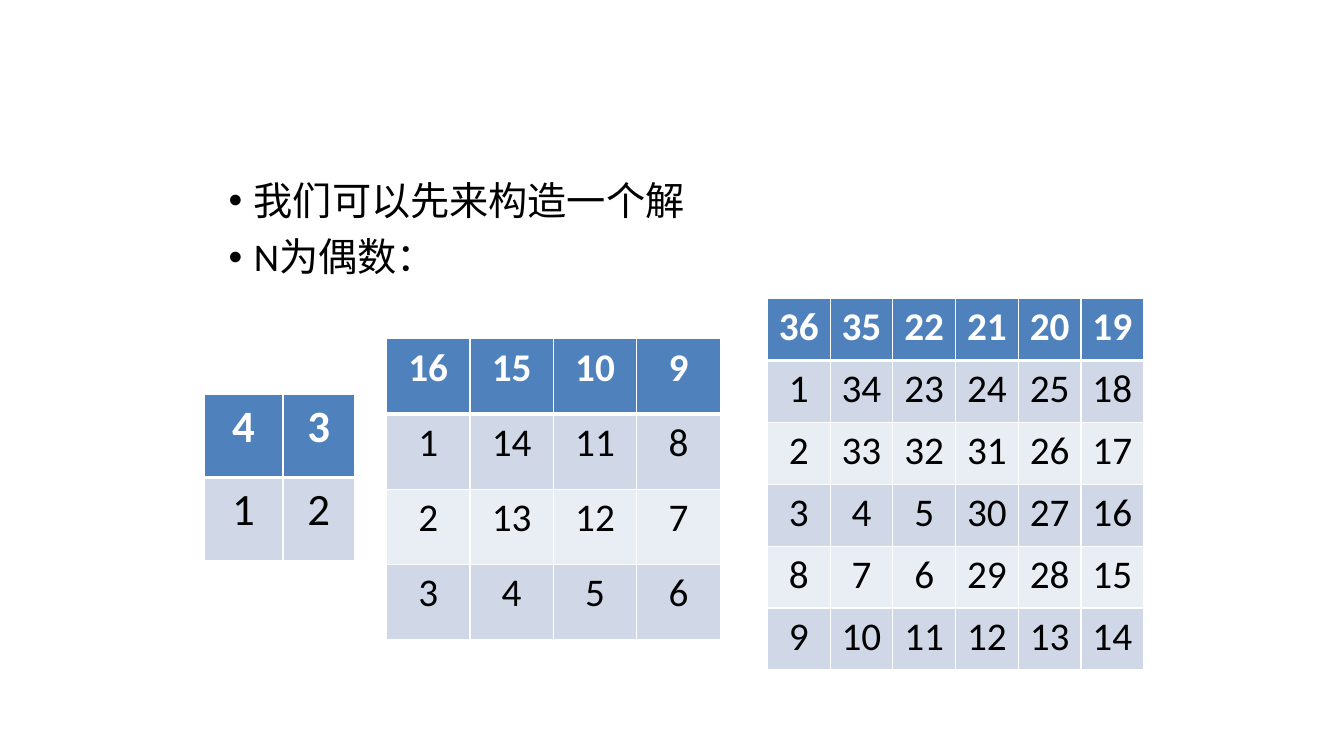
from lxml import etree
from pptx import Presentation
from pptx.dml.color import RGBColor
from pptx.enum.text import PP_ALIGN
from pptx.oxml.ns import qn
from pptx.util import Pt

CENTER = PP_ALIGN.CENTER
FONT = "Calibri"
COLORS = {
    "header": "4F81BD",
    "odd_row": "D0D8E8",
    "even_row": "E9EDF4",
    "border": "FFFFFF",
    "header_text": "FFFFFF",
    "text": "000000",
}


def format_run(run, size, color, bold=False):
    values = {"name": FONT, "size": Pt(size), "bold": bold}
    for name, value in values.items():
        setattr(run.font, name, value)
    run.font.color.rgb = RGBColor.from_string(COLORS[color])


def set_borders(cell, widths):
    """Draw the cell's edges; widths maps an edge tag to points."""
    properties = cell._tc.get_or_add_tcPr()
    for edge, width in widths.items():
        line = etree.SubElement(properties, qn(f"a:{edge}"), w=str(int(Pt(width))))
        fill = etree.SubElement(line, qn("a:solidFill"))
        etree.SubElement(fill, qn("a:srgbClr"), val=COLORS["border"])


presentation = Presentation()
presentation.slide_width = Pt(960)
presentation.slide_height = Pt(540)
slide = presentation.slides.add_slide(presentation.slide_layouts[6])

# Bulleted introduction
introduction = slide.shapes.add_textbox(Pt(156.2), Pt(126), Pt(647.3), Pt(92.9))
text_frame = introduction.text_frame
text_frame.word_wrap = True
for index, line in enumerate(["我们可以先来构造一个解", "N为偶数："]):
    paragraph = text_frame.add_paragraph() if index else text_frame.paragraphs[0]
    paragraph.line_spacing = 0.9
    paragraph.space_before = Pt(10)
    properties = paragraph._p.get_or_add_pPr()
    properties.set("marL", str(int(Pt(18))))
    properties.set("indent", str(int(Pt(-18))))
    etree.SubElement(properties, qn("a:buFont"), typeface="Arial")
    etree.SubElement(properties, qn("a:buChar"), char="•")
    run = paragraph.add_run()
    run.text = line
    format_run(run, 28, "text")

# Number squares for N = 2, 4 and 6
squares = [
    {
        "left": 145.7, "top": 281.7, "size": 32,
        "columns": [56.4, 51.3], "row_height": 59.4,
        "numbers": [[4, 3], [1, 2]],
    },
    {
        "left": 276.1, "top": 241.9, "size": 28,
        "columns": [59.6] * 4, "row_height": 53.8,
        "numbers": [
            [16, 15, 10, 9],
            [1, 14, 11, 8],
            [2, 13, 12, 7],
            [3, 4, 5, 6],
        ],
    },
    {
        "left": 548.2, "top": 213.3, "size": 28,
        "columns": [44.8] * 6, "row_height": 44.2,
        "numbers": [
            [36, 35, 22, 21, 20, 19],
            [1, 34, 23, 24, 25, 18],
            [2, 33, 32, 31, 26, 17],
            [3, 4, 5, 30, 27, 16],
            [8, 7, 6, 29, 28, 15],
            [9, 10, 11, 12, 13, 14],
        ],
    },
]
for square in squares:
    numbers, columns = square["numbers"], square["columns"]
    count = len(numbers)
    table = slide.shapes.add_table(
        count, count, Pt(square["left"]), Pt(square["top"]),
        Pt(sum(columns)), Pt(square["row_height"] * count),
    ).table
    for column, width in zip(table.columns, columns):
        column.width = Pt(width)
    for row_index, row_numbers in enumerate(numbers):
        table.rows[row_index].height = Pt(square["row_height"])
        is_header = row_index == 0
        band = "header" if is_header else "odd_row" if row_index % 2 else "even_row"
        borders = {
            "lnL": 1,
            "lnR": 1,
            "lnT": 3 if row_index == 1 else 1,
            "lnB": 3 if is_header else 1,
        }
        for column_index, number in enumerate(row_numbers):
            cell = table.cell(row_index, column_index)
            set_borders(cell, borders)
            cell.fill.solid()
            cell.fill.fore_color.rgb = RGBColor.from_string(COLORS[band])
            paragraph = cell.text_frame.paragraphs[0]
            paragraph.alignment = CENTER
            spacing = etree.SubElement(paragraph._p.get_or_add_pPr(), qn("a:spcBef"))
            etree.SubElement(spacing, qn("a:spcPct"), val="20000")
            run = paragraph.add_run()
            run.text = str(number)
            format_run(run, square["size"], "header_text" if is_header else "text", is_header)

presentation.save("out.pptx")
